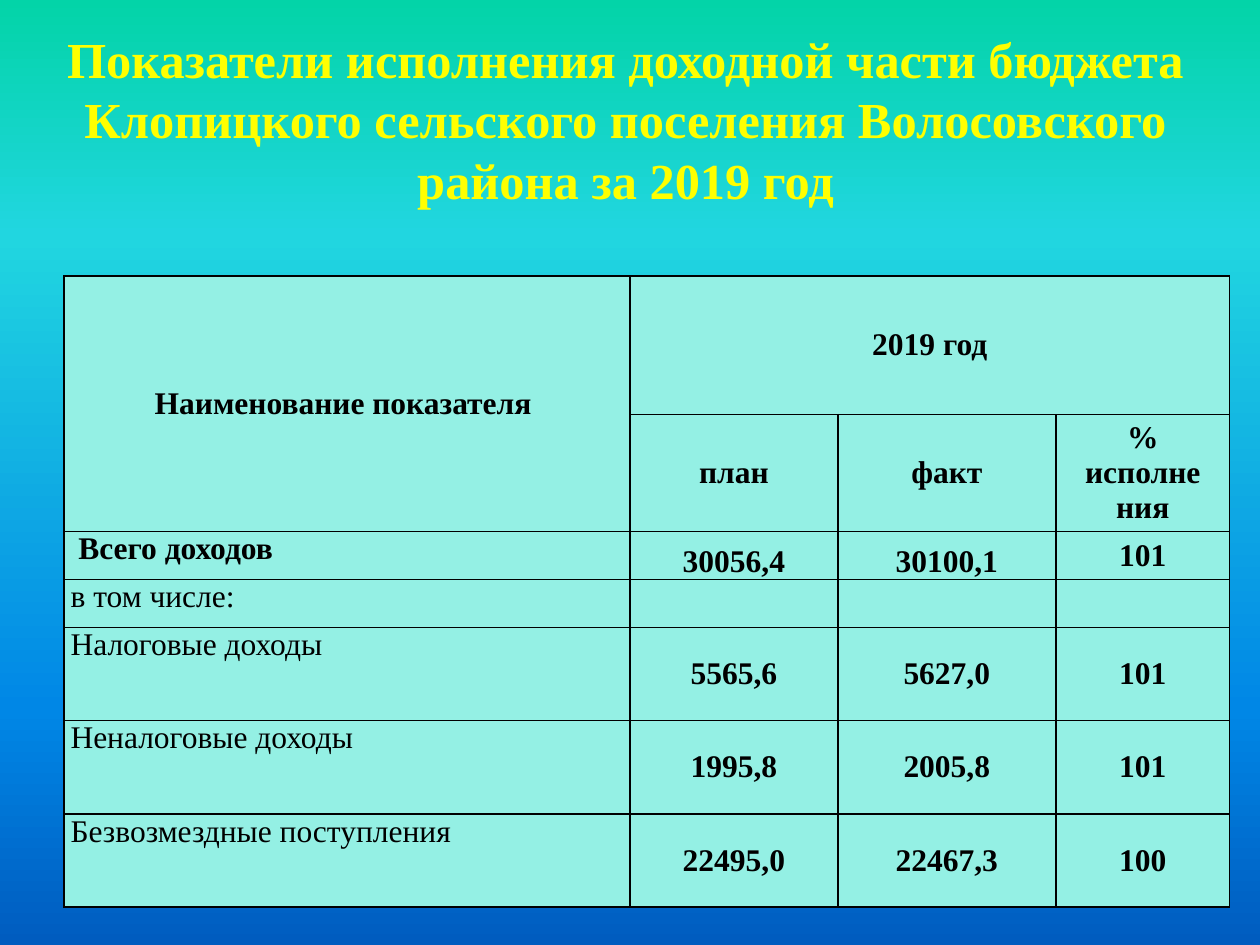
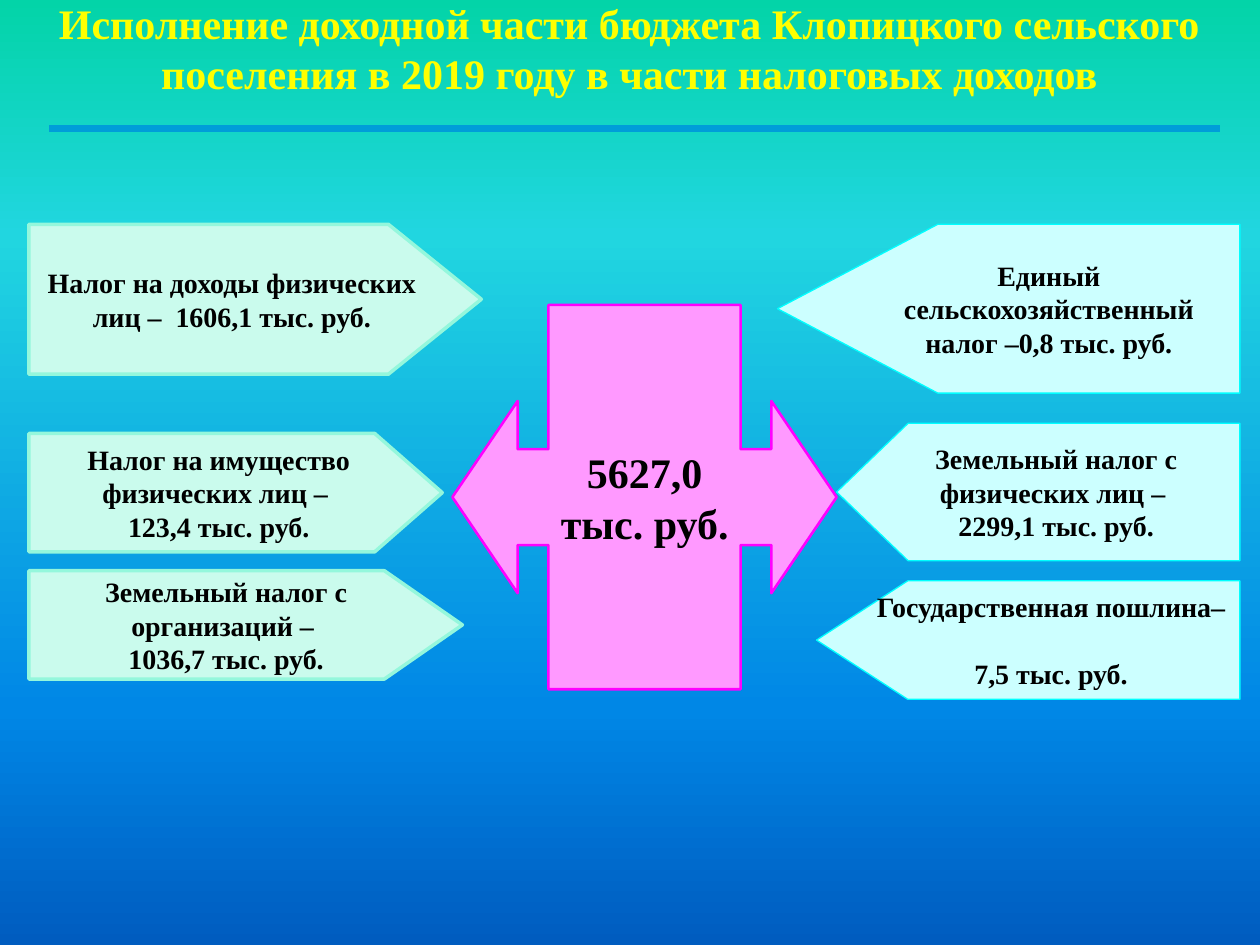
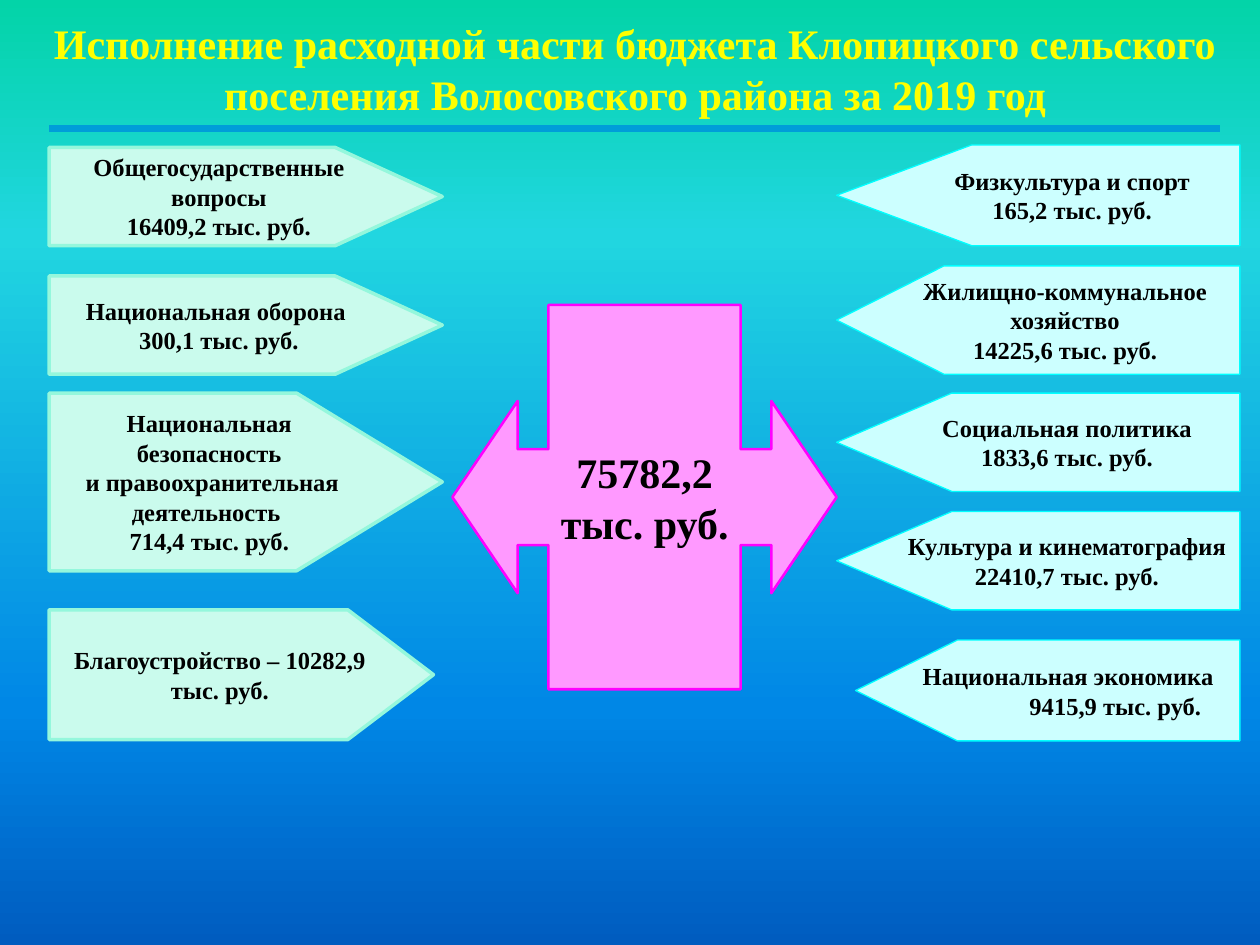
from lxml import etree
from pptx import Presentation
from pptx.dml.color import RGBColor
from pptx.enum.shapes import MSO_CONNECTOR as Link, MSO_SHAPE as Form
from pptx.enum.text import MSO_ANCHOR as Anchor, PP_ALIGN as Align
from pptx.oxml import parse_xml
from pptx.oxml.ns import nsdecls, qn
from pptx.util import Inches, Pt

FONT = "Times New Roman"
BLACK = RGBColor(0x00, 0x00, 0x00)
YELLOW = RGBColor(0xFF, 0xFF, 0x00)
BLUE = RGBColor(0x00, 0x9D, 0xD9)
PINK = RGBColor(0xFF, 0x99, 0xFF)
MAGENTA = RGBColor(0xFF, 0x00, 0xFF)
ICE = RGBColor(0xCC, 0xFF, 0xFF)
CYAN = RGBColor(0x00, 0xFF, 0xFF)
MINT = RGBColor(0xCA, 0xFB, 0xED)
GREEN = RGBColor(0x94, 0xF7, 0xDC)
AQUA = RGBColor(0x94, 0xF0, 0xE4)
SKY = [
    (0, RGBColor(0x03, 0xD4, 0xA8)),
    (25, RGBColor(0x21, 0xD6, 0xE0)),
    (75, RGBColor(0x00, 0x87, 0xE6)),
    (100, RGBColor(0x00, 0x5C, 0xBF)),
]
RIGHT = 9.84

COLS = [4.49, 1.65, 1.73, 1.38]
ROWS = [1.1, 0.93, 0.38, 0.38, 0.74, 0.74, 0.74]
DATA = [
    ["Наименование показателя ", "2019 год", "", ""],
    ["", "план", "факт", "%\vисполне ния"],
    [" Всего доходов", "30056,4", "30100,1", "101"],
    ["в том числе:", "", "", ""],
    ["Налоговые доходы", "5565,6", "5627,0", "101"],
    ["Неналоговые доходы", "1995,8", "2005,8", "101"],
    ["Безвозмездные поступления", "22495,0", "22467,3", "100"],
]

TAX_LEFT = [
    (0.23, 1.78, 3.59, 1.19, 0.62,
     ["Налог на доходы физических лиц –  1606,1 тыс. руб."]),
    (0.23, 3.44, 3.28, 0.94, 0.57,
     ["Налог на имущество физических лиц – ", "123,4 тыс. руб."]),
    (0.23, 4.53, 3.44, 0.86, 0.72,
     ["Земельный налог с организаций – ", "1036,7 тыс. руб."]),
]
TAX_RIGHT = [
    (1.78, 3.67, 1.34, 0.95,
     ["Единый сельскохозяйственный налог –0,8 тыс. руб."]),
    (3.36, 3.2, 1.09, 0.52,
     ["Земельный налог с физических лиц – ", "2299,1 тыс. руб."]),
    (4.61, 3.36, 0.94, 0.77,
     ["Государственная пошлина–", "7,5 тыс. руб."]),
]
COST_LEFT = [
    (0.39, 1.17, 3.12, 0.78, 1.09,
     ["Общегосударственные вопросы", "16409,2 тыс. руб."]),
    (0.39, 2.19, 3.12, 0.78, 1.09,
     ["Национальная оборона ", "300,1 тыс. руб."]),
    (0.39, 3.12, 3.12, 1.41, 0.82,
     ["Национальная безопасность", " и правоохранительная деятельность ",
      "714,4 тыс. руб."]),
    (0.39, 4.84, 3.05, 1.03, 0.66, ["Благоустройство – 10282,9 тыс. руб."]),
]
COST_RIGHT = [
    (1.15, 3.2, 0.8, 1.34, ["Физкультура и спорт", "165,2 тыс. руб."]),
    (2.11, 3.2, 0.86, 0.99,
     ["Жилищно-коммунальное хозяйство", "14225,6 тыс. руб."]),
    (3.12, 3.2, 0.78, 1.17, ["Социальная политика", "1833,6 тыс. руб."]),
    (4.06, 3.2, 0.78, 1.17,
     ["Культура и кинематография", "22410,7 тыс. руб."]),
    (5.08, 3.05, 0.8, 1.01, ["Национальная экономика", "9415,9 тыс. руб."]),
]


def style(frame, size, color=BLACK, bold=True, align=Align.CENTER):
    for para in frame.paragraphs:
        para.alignment = align
        for run in para.runs:
            font = run.font
            font.name, font.size, font.bold = FONT, Pt(size), bold
            font.color.rgb = color


def new_slide(deck):
    slide = deck.slides.add_slide(deck.slide_layouts[6])
    fill = slide.background.fill
    fill.gradient()
    fill.gradient_angle = 270
    stops = fill._fill._gradFill.find(qn("a:gsLst"))
    for stop in list(stops):
        stops.remove(stop)
    for pos, color in SKY:
        stop = etree.SubElement(stops, qn("a:gs"), pos=str(pos * 1000))
        etree.SubElement(stop, qn("a:srgbClr"), val=str(color))
    return slide


def add_title(slide, text, box, size, tight=True):
    frame = slide.shapes.add_textbox(*map(Inches, box)).text_frame
    frame.word_wrap = True
    frame.vertical_anchor = Anchor.BOTTOM
    if tight:
        frame.margin_left = frame.margin_right = frame.margin_bottom = 0
    frame.text = text
    style(frame, size, YELLOW)


def add_rule(slide):
    ends = map(Inches, (0.39, 1.02, 9.68, 1.02))
    rule = slide.shapes.add_connector(Link.STRAIGHT, *ends)
    rule.line.color.rgb = BLUE
    rule.line.width = Pt(3.75)
    etree.SubElement(rule._element.spPr, qn("a:effectLst"))


def add_form(slide, kind, box, adjs, paint, edge, width, lines, size):
    form = slide.shapes.add_shape(kind, *map(Inches, box))
    form.shadow.inherit = False
    for i, adj in enumerate(adjs):
        form.adjustments[i] = adj
    form.fill.solid()
    form.fill.fore_color.rgb = paint
    form.line.color.rgb = edge
    form.line.width = Pt(width)
    frame = form.text_frame
    frame.word_wrap = True
    frame.vertical_anchor = Anchor.MIDDLE
    frame.text = "\n".join(lines)
    style(frame, size)
    return form


def add_hub(slide, total):
    hub = add_form(slide, Form.UP_DOWN_ARROW_CALLOUT, (3.59, 2.42, 3.05, 3.05),
                   (0.25, 0.25, 0.17, 0.5), PINK, MAGENTA, 1.5,
                   [total, "тыс. руб."], 24)
    hub.rotation = 270
    hub.text_frame.word_wrap = False
    hub.text_frame._txBody.bodyPr.set("vert", "eaVert")


def add_plates(slide, left, right, size):
    for x, y, w, h, adj, lines in left:
        add_form(slide, Form.PENTAGON, (x, y, w, h), [adj],
                 MINT, GREEN, 2, lines, size)
    frames = []
    for y, w, h, adj, lines in right:
        plate = add_form(slide, Form.PENTAGON, (RIGHT - w, y, w, h), [adj],
                         ICE, CYAN, 0.75, lines, size)
        plate.rotation = 180
        plate.text_frame._txBody.bodyPr.set("rot", "10800000")
        frames.append(plate.text_frame)
    return frames


def add_edges(cell):
    props = cell._tc.get_or_add_tcPr()
    for i, side in enumerate(("lnL", "lnR", "lnT", "lnB")):
        props.insert(i, parse_xml(
            f'<a:{side} {nsdecls("a")} w="12700"><a:solidFill>'
            f'<a:srgbClr val="{BLACK}"/></a:solidFill></a:{side}>'))


def add_grid(slide):
    box = map(Inches, (0.51, 2.19, sum(COLS), sum(ROWS)))
    grid = slide.shapes.add_table(len(ROWS), len(COLS), *box).table
    for col, width in zip(grid.columns, COLS):
        col.width = Inches(width)
    for row, height in zip(grid.rows, ROWS):
        row.height = Inches(height)
    for r, texts in enumerate(DATA):
        for c, text in enumerate(texts):
            cell = grid.cell(r, c)
            cell.fill.solid()
            cell.fill.fore_color.rgb = AQUA
            cell.margin_left = cell.margin_right = Inches(0.05)
            cell.margin_top = cell.margin_bottom = 0
            label = c == 0 and r > 1
            total = r == 2 and c in (1, 2)
            cell.vertical_anchor = (Anchor.TOP if label else
                                    Anchor.BOTTOM if total else Anchor.MIDDLE)
            cell.text = text
            style(cell.text_frame, 18, bold=not label or r == 2,
                  align=Align.LEFT if label else Align.CENTER)
            add_edges(cell)
    grid.cell(0, 0).merge(grid.cell(1, 0))
    grid.cell(0, 1).merge(grid.cell(0, 3))


def main():
    deck = Presentation()
    deck.slide_width, deck.slide_height = Inches(10), Inches(7.5)

    slide = new_slide(deck)
    add_title(slide, "Показатели исполнения доходной части бюджета Клопицкого "
              "сельского поселения Волосовского района за 2019 год",
              (0.16, 0.23, 9.61, 1.48), 28.8, tight=False)
    add_grid(slide)

    slide = new_slide(deck)
    add_title(slide, "Исполнение доходной части бюджета Клопицкого сельского "
              "поселения в 2019 году в части налоговых доходов",
              (0.23, 0.16, 9.53, 0.62), 24)
    add_hub(slide, "5627,0")
    add_rule(slide)
    frames = add_plates(slide, TAX_LEFT, TAX_RIGHT, 16)
    frames[-1].paragraphs[0].space_after = Pt(19)

    slide = new_slide(deck)
    add_title(slide, "Исполнение расходной части бюджета Клопицкого сельского "
              "поселения Волосовского района за 2019 год",
              (0.39, 0.16, 9.3, 0.78), 24)
    add_hub(slide, "75782,2")
    add_rule(slide)
    frames = add_plates(slide, COST_LEFT, COST_RIGHT, 14)
    name, value = frames[-1].paragraphs
    name._p.get_or_add_pPr().set("marR", str(Inches(0.08)))
    value._p.get_or_add_pPr().set("marL", str(Inches(0.75)))

    deck.save("out.pptx")


if __name__ == "__main__":
    main()
